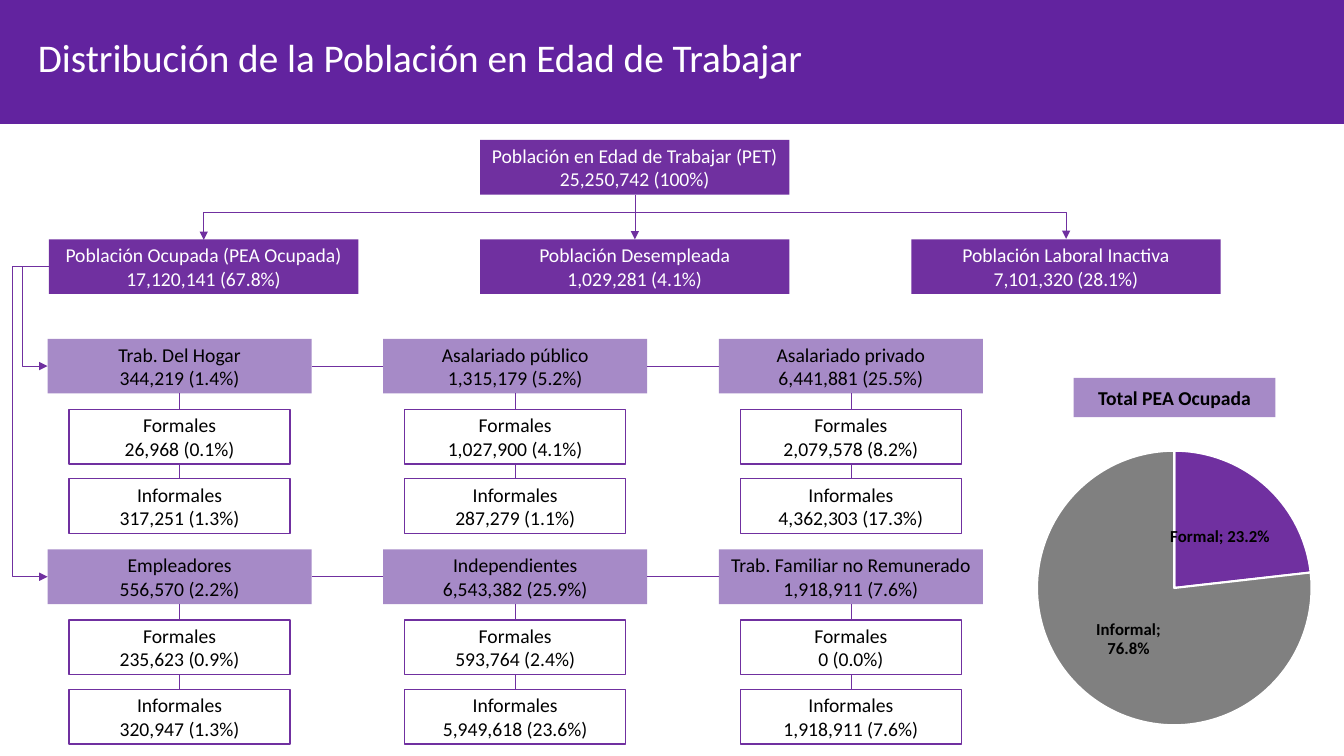
from lxml import etree
from pptx import Presentation
from pptx.chart.data import CategoryChartData
from pptx.dml.color import RGBColor
from pptx.enum.chart import XL_CHART_TYPE, XL_LABEL_POSITION
from pptx.enum.shapes import MSO_CONNECTOR as LINE, MSO_SHAPE as SHAPE
from pptx.enum.text import MSO_ANCHOR as ANCHOR, PP_ALIGN as ALIGN
from pptx.oxml.ns import qn
from pptx.util import Pt

FONT = "Calibri"
PURPLE, LILAC, BAND = "7030A0", "521B93", "62239F"
WHITE, BLACK, GRAY = "FFFFFF", "000000", "808080"
BOX_H = 39
TOP_W, HEAD_W, DETAIL_W = 221, 188.6, 158
COL_X, COL_STEP = 34, 239.75
DETAIL_DX, DETAIL_DY = 15.3, (50.4, 100)
NUDGE = 0.72  # a bent connector needs some width to scale its bend

GROUPS = [
    (242, [
        ("Trab. Del Hogar", "344,219 (1.4%)", "26,968 (0.1%)", "317,251 (1.3%)"),
        ("Asalariado público", "1,315,179 (5.2%)", "1,027,900 (4.1%)", "287,279 (1.1%)"),
        ("Asalariado privado", "6,441,881 (25.5%)", "2,079,578 (8.2%)", "4,362,303 (17.3%)"),
    ]),
    (392.5, [
        ("Empleadores", "556,570 (2.2%)", "235,623 (0.9%)", "320,947 (1.3%)"),
        ("Independientes", "6,543,382 (25.9%)", "593,764 (2.4%)", "5,949,618 (23.6%)"),
        ("Trab. Familiar no Remunerado", "1,918,911 (7.6%)", "0 (0.0%)", "1,918,911 (7.6%)"),
    ]),
]


def rgb(color):
    return RGBColor.from_string(color)


def write(shape, *lines, size=14, color=WHITE, bold=False, align=ALIGN.CENTER,
          anchor=ANCHOR.MIDDLE):
    """Put each line in its own paragraph."""
    tf = shape.text_frame
    tf.word_wrap = True
    tf.vertical_anchor = anchor
    for i, line in enumerate(lines):
        p = tf.add_paragraph() if i else tf.paragraphs[0]
        p.alignment = align
        r = p.add_run()
        r.text = line
        r.font.name, r.font.size, r.font.bold = FONT, Pt(size), bold
        r.font.color.rgb = rgb(color)


def add_box(slide, x, y, w, h, fill, alpha=None, line=None):
    sp = slide.shapes.add_shape(SHAPE.RECTANGLE, Pt(x), Pt(y), Pt(w), Pt(h))
    sp.shadow.inherit = False
    sp.fill.solid()
    sp.fill.fore_color.rgb = rgb(fill)
    if alpha:
        clr = sp._element.spPr.find(qn("a:solidFill"))[0]
        etree.SubElement(clr, qn("a:alpha"), val=str(alpha * 1000))
    if line:
        sp.line.color.rgb = rgb(line)
        sp.line.width = Pt(1)
    else:
        sp.line.fill.background()
    return sp


def add_line(slide, start, end, kind=LINE.STRAIGHT, head=False, tail=False):
    c = slide.shapes.add_connector(kind, *(Pt(v) for v in (*start, *end)))
    c.line.color.rgb = rgb(PURPLE)
    c.line.width = Pt(0.5)
    for tag, wanted in (("a:headEnd", head), ("a:tailEnd", tail)):
        if wanted:
            etree.SubElement(c.line._get_or_add_ln(), qn(tag), type="triangle")
    etree.SubElement(c._element.spPr, qn("a:effectLst"))
    return c


def join(slide, first, first_side, second, second_side, tail=False):
    c = add_line(slide, (0, 0), (0, 0), tail=tail)
    c.begin_connect(first, first_side)
    c.end_connect(second, second_side)


def add_bracket(slide, start, end, reach, rotation=0, **arrows):
    """Draw a three-part connector whose middle part lies reach points out."""
    c = add_line(slide, start, end, LINE.ELBOW, **arrows)
    spPr = c._element.spPr
    if rotation:
        spPr.find(qn("a:xfrm")).set("rot", str(rotation * 60000))
    guides = spPr.find(qn("a:prstGeom")).find(qn("a:avLst"))
    etree.SubElement(guides, qn("a:gd"), name="adj1",
                     fmla=f"val {round(reach / NUDGE * 100000)}")


def add_top_levels(slide):
    def top_box(x, y, *lines):
        sp = add_box(slide, x, y, TOP_W, BOX_H, PURPLE)
        write(sp, *lines)
        return sp

    total = top_box(343, 100, "Población en Edad de Trabajar (PET)", "25,250,742 (100%)")
    top_box(35, 171, "Población Ocupada (PEA Ocupada)", "17,120,141 (67.8%)")
    unemployed = top_box(343, 171, "Población Desempleada", "1,029,281 (4.1%)")
    top_box(651, 171, "Población Laboral Inactiva", "7,101,320 (28.1%)")
    join(slide, total, 2, unemployed, 0, tail=True)
    # Before its quarter turn the bracket stands upright around its centre
    cx, cy, half = 453.5, 171, 308
    add_bracket(slide, (cx + NUDGE / 2, cy + half), (cx - NUDGE / 2, cy - half),
                20, rotation=90, head=True, tail=True)


def add_group(slide, x, y, name, total, formal, informal):
    header = add_box(slide, x, y, HEAD_W, BOX_H, LILAC, alpha=51)
    write(header, name, total, color=BLACK)
    above = header
    for dy, label, value in zip(DETAIL_DY, ("Formales", "Informales"), (formal, informal)):
        detail = add_box(slide, x + DETAIL_DX, y + dy, DETAIL_W, BOX_H, WHITE, line=PURPLE)
        write(detail, label, value, color=BLACK)
        join(slide, above, 2, detail, 0)
        above = detail
    return header


def add_groups(slide):
    for (y, groups), reach in zip(GROUPS, (18.7, 26.3)):
        headers = [add_group(slide, COL_X + i * COL_STEP, y, *group)
                   for i, group in enumerate(groups)]
        for left, right in zip(headers, headers[1:]):
            join(slide, left, 3, right, 1)
        add_bracket(slide, (COL_X + NUDGE, 171 + BOX_H / 2), (COL_X, y + BOX_H / 2),
                    reach, tail=True)


def add_pie(slide):
    data = CategoryChartData(number_format="0.0%")
    data.categories = ["Formal", "Informal"]
    data.add_series("PEA Ocupada", (0.232, 0.768))
    chart = slide.shapes.add_chart(XL_CHART_TYPE.PIE, Pt(702), Pt(312), Pt(273.6),
                                   Pt(216), data).chart
    chart.has_legend = chart.has_title = False
    chart.font.name, chart.font.size = FONT, Pt(10)
    plot = chart.plots[0]
    plot.vary_by_categories = True
    for i, color in enumerate((PURPLE, GRAY)):
        fmt = plot.series[0].points[i].format
        fmt.fill.solid()
        fmt.fill.fore_color.rgb = rgb(color)
        fmt.line.color.rgb = rgb(WHITE)
        fmt.line.width = Pt(1.5)
    plot.has_data_labels = True
    labels = plot.data_labels
    labels.show_category_name = labels.show_value = True
    labels.show_percentage = False
    labels.number_format, labels.number_format_is_linked = "0.0%", False
    labels.position = XL_LABEL_POSITION.CENTER
    labels.font.name, labels.font.size, labels.font.bold = FONT, Pt(12), True
    labels.font.color.rgb = rgb(BLACK)


def main():
    prs = Presentation()
    prs.slide_width, prs.slide_height = Pt(960), Pt(540)
    slide = prs.slides.add_slide(prs.slide_layouts[6])
    add_box(slide, 0, 0, 960, 88.5, BAND)
    title = slide.shapes.add_textbox(Pt(20), Pt(20), Pt(906), Pt(41))
    write(title, "Distribución de la Población en Edad de Trabajar", size=28,
          align=ALIGN.LEFT, anchor=ANCHOR.TOP)
    add_top_levels(slide)
    add_groups(slide)
    add_pie(slide)
    pie_title = add_box(slide, 767, 270, 144, 28, LILAC, alpha=51)
    write(pie_title, "Total PEA Ocupada", color=BLACK, bold=True)
    prs.save("out.pptx")


if __name__ == "__main__":
    main()
